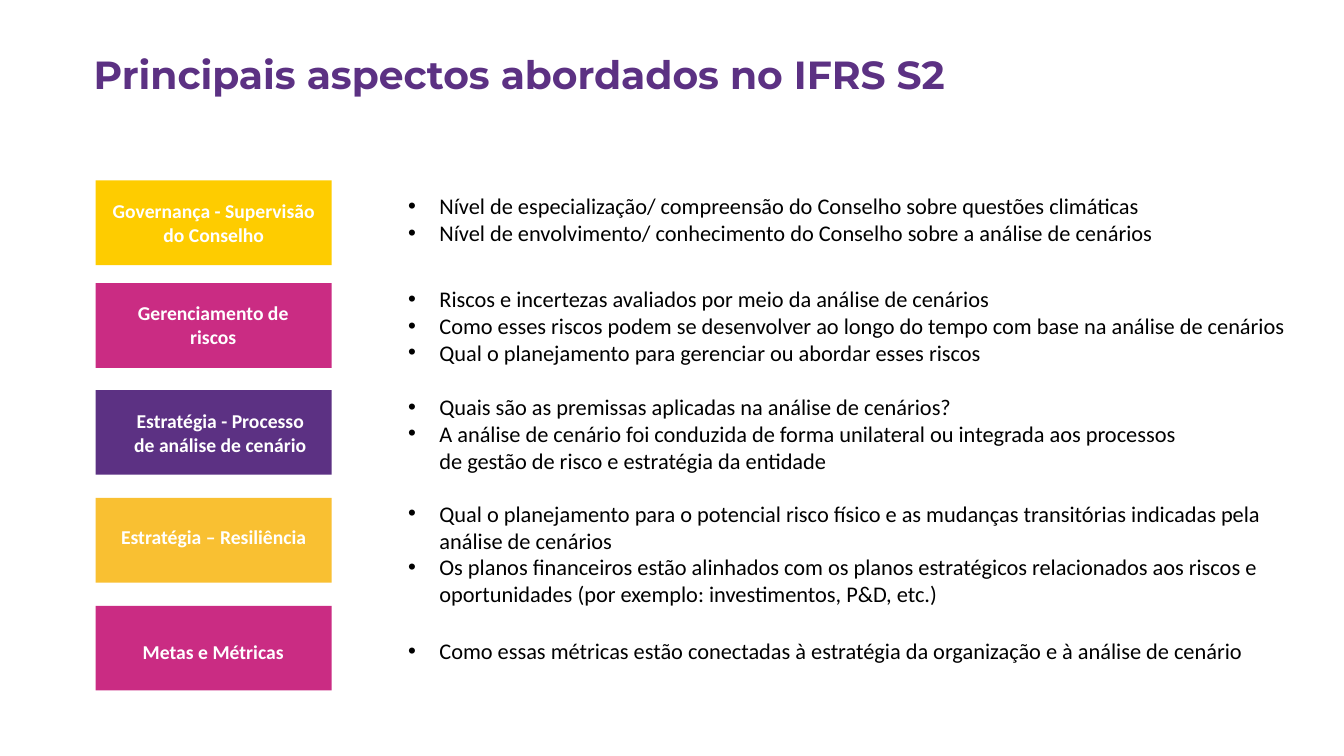
from dataclasses import dataclass
from typing import Optional

from lxml.etree import SubElement
from pptx import Presentation
from pptx.dml.color import RGBColor
from pptx.enum.shapes import MSO_SHAPE as Preset
from pptx.enum.text import MSO_ANCHOR as Anchor, PP_ALIGN as Align
from pptx.oxml.ns import qn
from pptx.util import Inches, Pt

COLORS = {
    "yellow": "FECC00",
    "magenta": "CA2C83",
    "purple": "5C3183",
    "amber": "F9C032",
    "white": "FFFFFF",
    "black": "000000",
}
TILE_LEFT, TILE_WIDTH, TILE_HEIGHT = 0.95, 2.34, 0.84
BULLETS_LEFT, BULLET_INDENT = 3.95, 0.31


@dataclass
class Area:
    left: float
    top: float
    width: float
    height: float


@dataclass
class Topic:
    label: str
    color: str
    tile_top: float
    label_area: Optional[Area]  # None puts the label inside the tile
    bullets_area: Area
    bullets: list[str]


TOPICS = [
    Topic("Governança - Supervisão do Conselho", "yellow", 1.79, None,
          Area(BULLETS_LEFT, 1.86, 8.89, 0.64),
          ["Nível de especialização/ compreensão do Conselho sobre questões climáticas",
           "Nível de envolvimento/ conhecimento do Conselho sobre a análise de cenários"]),
    Topic("Gerenciamento de riscos", "magenta", 2.81, Area(1.19, 2.94, 1.85, 0.57),
          Area(BULLETS_LEFT, 2.78, 9.25, 0.91),
          ["Riscos e incertezas avaliados por meio da análise de cenários",
           "Como esses riscos podem se desenvolver ao longo do tempo com base na análise de cenários",
           "Qual o planejamento para gerenciar ou abordar esses riscos"]),
    Topic("Estratégia - Processo de análise de cenário", "purple", 3.87,
          Area(1.19, 4.01, 1.99, 0.57),
          Area(BULLETS_LEFT, 3.85, 8.03, 0.91),
          ["Quais são as premissas aplicadas na análise de cenários?",
           "A análise de cenário foi conduzida de forma unilateral ou integrada aos processos "
           "de gestão de risco e estratégia da entidade"]),
    Topic("Estratégia – Resiliência", "amber", 4.94,
          Area(TILE_LEFT, 5.16, TILE_WIDTH, 0.34),
          Area(BULLETS_LEFT, 4.91, 8.72, 1.18),
          ["Qual o planejamento para o potencial risco físico e as mudanças transitórias "
           "indicadas pela análise de cenários",
           "Os planos financeiros estão alinhados com os planos estratégicos relacionados "
           "aos riscos e oportunidades (por exemplo: investimentos, P&D, etc.)"]),
    Topic("Metas e Métricas", "magenta", 6.01, Area(1.19, 6.3, 1.85, 0.34),
          Area(BULLETS_LEFT, 6.27, 8.72, 0.37),
          ["Como essas métricas estão conectadas à estratégia da organização e à análise de cenário"]),
]


def rgb(name: str) -> RGBColor:
    return RGBColor.from_string(COLORS[name])


def lengths(area: Area) -> list[int]:
    return [Inches(side) for side in (area.left, area.top, area.width, area.height)]


def add_span(para, text: str, size: int, color: str, bold: bool = False,
             font: str = "Calibri") -> None:
    span = para.add_run()
    span.text = text
    span.font.name = font
    span.font.size = Pt(size)
    span.font.bold = bold
    span.font.color.rgb = rgb(color)


def add_text_frame(page, area: Area):
    frame = page.shapes.add_textbox(*lengths(area)).text_frame
    frame.word_wrap = True
    return frame


def add_tile(page, topic: Topic):
    area = Area(TILE_LEFT, topic.tile_top, TILE_WIDTH, TILE_HEIGHT)
    tile = page.shapes.add_shape(Preset.RECTANGLE, *lengths(area))
    tile.shadow.inherit = False
    tile.fill.solid()
    tile.fill.fore_color.rgb = rgb(topic.color)
    tile.line.fill.background()
    tile.text_frame.word_wrap = True
    tile.text_frame.vertical_anchor = Anchor.MIDDLE
    return tile


def add_label(page, topic: Topic, tile) -> None:
    frame = add_text_frame(page, topic.label_area) if topic.label_area else tile.text_frame
    para = frame.paragraphs[0]
    para.alignment = Align.CENTER
    add_span(para, topic.label, 14, "white", bold=True)


def add_bullets(page, topic: Topic) -> None:
    frame = add_text_frame(page, topic.bullets_area)
    for index, text in enumerate(topic.bullets):
        para = frame.add_paragraph() if index else frame.paragraphs[0]
        properties = para._p.get_or_add_pPr()
        properties.set("marL", str(Inches(BULLET_INDENT)))
        properties.set("indent", str(-Inches(BULLET_INDENT)))
        SubElement(properties, qn("a:buFont")).set("typeface", "Arial")
        SubElement(properties, qn("a:buChar")).set("char", "•")
        add_span(para, text, 16, "black")


def main() -> None:
    deck = Presentation()
    deck.slide_width, deck.slide_height = Inches(13.33), Inches(7.5)
    page = deck.slides.add_slide(deck.slide_layouts[6])

    # Title
    title = add_text_frame(page, Area(0.83, 0.45, 9.51, 0.98))
    add_span(title.paragraphs[0], "Principais aspectos abordados no IFRS S2", 28,
             "purple", bold=True, font="Montserrat")

    # Topic tiles with their bullet lists
    for topic in TOPICS:
        tile = add_tile(page, topic)
        add_label(page, topic, tile)
        add_bullets(page, topic)

    deck.save("out.pptx")


if __name__ == "__main__":
    main()
